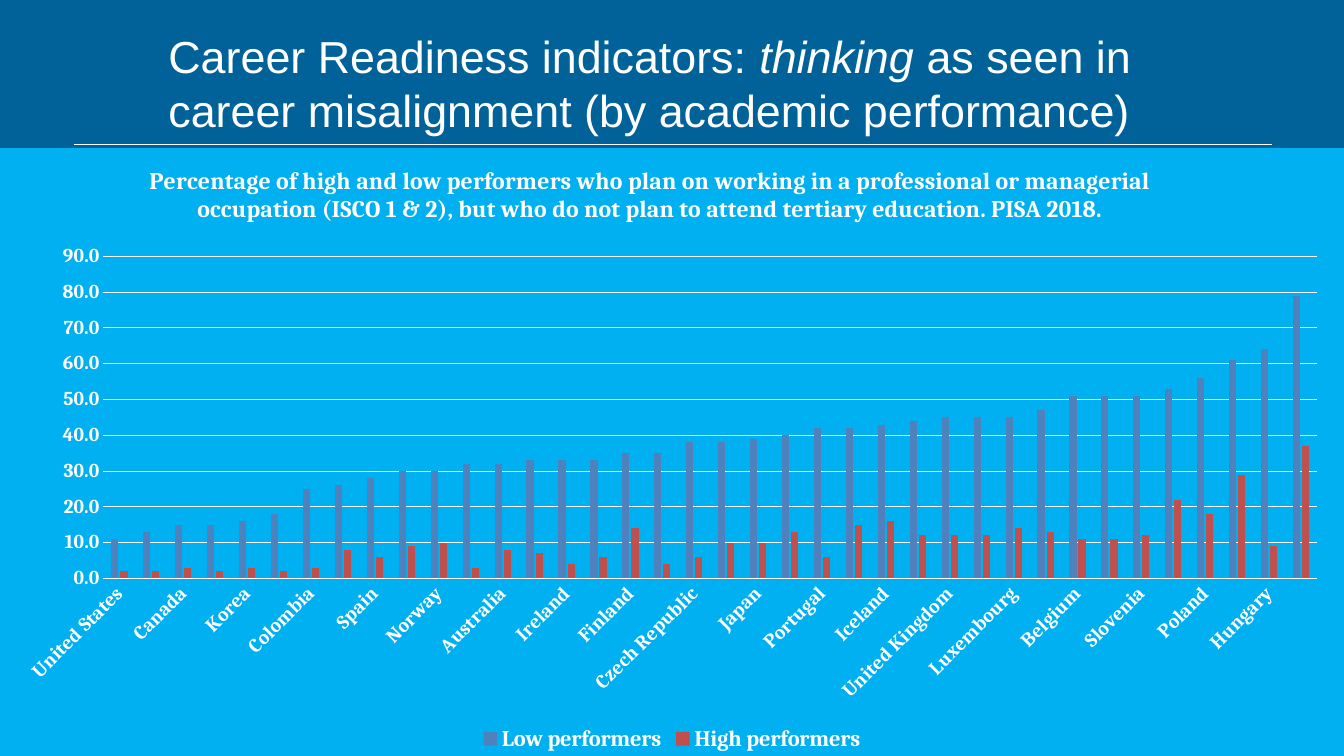
from lxml import etree
from pptx import Presentation
from pptx.chart.data import CategoryChartData
from pptx.dml.color import RGBColor
from pptx.enum.chart import XL_CHART_TYPE, XL_LEGEND_POSITION, XL_TICK_MARK
from pptx.enum.shapes import MSO_CONNECTOR
from pptx.enum.text import MSO_ANCHOR, PP_ALIGN
from pptx.oxml import parse_xml
from pptx.oxml.ns import nsdecls, qn
from pptx.util import Inches, Pt

COLUMNS = XL_CHART_TYPE.COLUMN_CLUSTERED
BOTTOM = XL_LEGEND_POSITION.BOTTOM
NO_TICK = XL_TICK_MARK.NONE
STRAIGHT = MSO_CONNECTOR.STRAIGHT
MIDDLE = MSO_ANCHOR.MIDDLE
LEFT = PP_ALIGN.LEFT

WHITE = RGBColor(0xFF, 0xFF, 0xFF)
NAVY = RGBColor(0x00, 0x62, 0x99)
SKY = RGBColor(0x00, 0xB0, 0xF0)
BLUE = RGBColor(0x4F, 0x81, 0xBD)
RED = RGBColor(0xC0, 0x50, 0x4D)

TITLE = [
    ("Career Readiness indicators: ", False),
    ("thinking ", True),
    ("as seen in career misalignment (by academic performance)", False),
]
CAPTION = [(
    "Percentage of high and low performers who plan on working in a "
    "professional or managerial occupation (ISCO 1 & 2), but who do not plan "
    "to attend tertiary education. PISA 2018.", False,
)]
# Country, low performers, high performers
ROWS = [
    ("United States", 11, 2), ("Chile", 13, 2), ("Canada", 15, 3),
    ("Mexico", 15, 2), ("Korea", 16, 3), ("Turkey", 18, 2),
    ("Colombia", 25, 3), ("France", 26, 8), ("Spain", 28, 6),
    ("Israel", 30, 9), ("Norway", 30, 10), ("Lithuania", 32, 3),
    ("Australia", 32, 8), ("Sweden", 33, 7), ("Ireland", 33, 4),
    ("Slovak Republic", 33, 6), ("Finland", 35, 14), ("Greece", 35, 4),
    ("Czech Republic", 38, 6), ("OECD average", 38, 10), ("Japan", 39, 10),
    ("Italy", 40, 13), ("Portugal", 42, 6), ("New Zealand", 42, 15),
    ("Iceland", 43, 16), ("Estonia", 44, 12), ("United Kingdom", 45, 12),
    ("Latvia", 45, 12), ("Luxembourg", 45, 14), ("Denmark", 47, 13),
    ("Belgium", 51, 11), ("Netherlands", 51, 11), ("Slovenia", 51, 12),
    ("Switzerland", 53, 22), ("Poland", 56, 18), ("Austria", 61, 29),
    ("Hungary", 64, 9), ("Germany", 79, 37),
]
SERIES = [("Low performers", BLUE), ("High performers", RED)]


def style(font, size, face="Cambria", bold=True, italic=False):
    font.size, font.name = Pt(size), face
    font.bold, font.italic = bold, italic
    font.color.rgb = WHITE


def write(frame, runs, size, **form):
    for text, italic in runs:
        run = frame.paragraphs[0].add_run()
        run.text = text
        style(run.font, size, italic=italic, **form)


def place(part, index, **spots):
    """Give a chart part a manual layout in fractions of the chart."""
    for old in part.findall(qn("c:layout")):
        part.remove(old)
    layout = etree.Element(qn("c:layout"))
    manual = etree.SubElement(layout, qn("c:manualLayout"))
    for name, val in spots.items():
        etree.SubElement(manual, qn("c:" + name), val=str(val))
    part.insert(index, layout)


def add_title(slide):
    title = slide.shapes.title
    title.left, title.top = Inches(1.57), Inches(0.26)
    title.width, title.height = Inches(10.81), Inches(1.12)
    frame = title.text_frame
    frame.word_wrap = True
    frame.vertical_anchor = MIDDLE
    frame.paragraphs[0].alignment = LEFT
    write(frame, TITLE, 32, face="Arial", bold=False)


def add_rule(slide):
    rule = slide.shapes.add_connector(
        STRAIGHT, Inches(0.73), Inches(1.43), Inches(12.62), Inches(1.43))
    rule.line.color.rgb = WHITE
    rule.line.width = Pt(0.5)
    etree.SubElement(rule._element.spPr, qn("a:effectLst"))


def format_axes(chart):
    cat, val = chart.category_axis, chart.value_axis
    for axis in (cat, val):
        axis.major_tick_mark = axis.minor_tick_mark = NO_TICK
        style(axis.tick_labels.font, 14)
    val.minimum_scale, val.maximum_scale, val.major_unit = 0, 90, 10
    val.tick_labels.number_format = "0.0"
    val.tick_labels.number_format_is_linked = False
    val.format.line.fill.background()
    for line in (cat.format.line, val.major_gridlines.format.line):
        line.color.rgb = WHITE
        line.width = Pt(0.75)

    node = cat._element
    node.find(qn("c:txPr")).find(qn("a:bodyPr")).set("rot", "-2700000")
    skip = etree.Element(qn("c:tickLblSkip"), val="2")
    node.find(qn("c:noMultiLvlLbl")).addprevious(skip)


def add_chart(slide):
    names, *values = zip(*ROWS)
    data = CategoryChartData(number_format="0.0")
    data.categories = names
    for (name, _), vals in zip(SERIES, values):
        data.add_series(name, vals)
    chart = slide.shapes.add_chart(
        COLUMNS, 0, Inches(1.47), Inches(13.33), Inches(6.03), data).chart
    style(chart.font, 12)

    fill = parse_xml(
        f'<c:spPr {nsdecls("c", "a")}><a:solidFill><a:srgbClr val="{SKY}"/>'
        '</a:solidFill><a:ln><a:noFill/></a:ln></c:spPr>')
    space = chart._chartSpace
    space.find(qn("c:txPr")).addprevious(fill)

    chart.has_title = True
    write(chart.chart_title.text_frame, CAPTION, 17)
    place(chart.chart_title._element, 1,
          xMode="edge", yMode="edge", x=0.108, y=0.02)
    place(space.chart.plotArea, 0, layoutTarget="inner", xMode="edge",
          yMode="edge", x=0.077, y=0.178, w=0.903, h=0.53)

    plot = chart.plots[0]
    plot.gap_width, plot.overlap = 219, -27
    plot.vary_by_categories = False
    for series, (_, color) in zip(plot.series, SERIES):
        series.format.fill.solid()
        series.format.fill.fore_color.rgb = color
    format_axes(chart)

    chart.has_legend = True
    chart.legend.position = BOTTOM
    chart.legend.include_in_layout = False
    style(chart.legend.font, 16)


def main():
    deck = Presentation()
    deck.slide_width, deck.slide_height = Inches(13.33), Inches(7.5)
    slide = deck.slides.add_slide(deck.slide_layouts[5])
    slide.background.fill.solid()
    slide.background.fill.fore_color.rgb = NAVY
    add_rule(slide)
    add_title(slide)
    add_chart(slide)
    deck.save("out.pptx")


if __name__ == "__main__":
    main()
